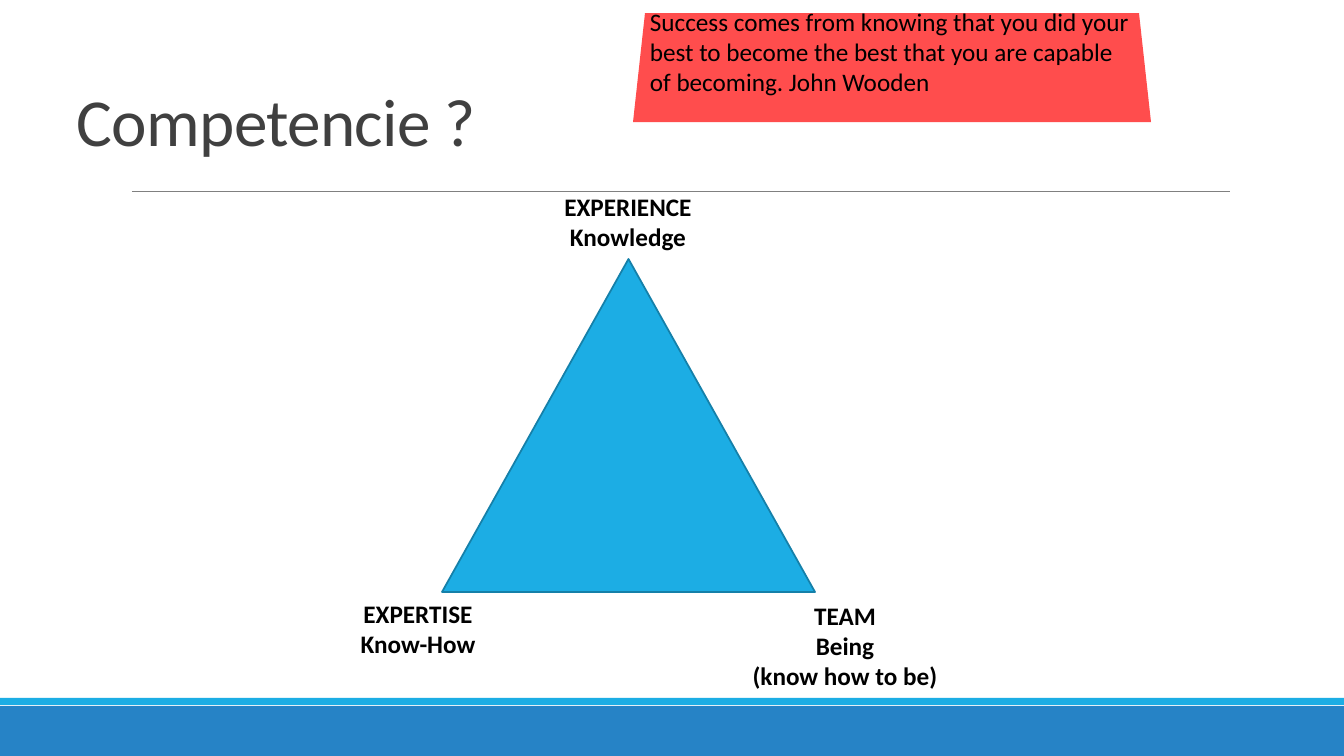
from lxml.etree import SubElement
from pptx import Presentation
from pptx.dml.color import RGBColor
from pptx.enum.shapes import MSO_CONNECTOR, MSO_SHAPE
from pptx.enum.text import MSO_ANCHOR, PP_ALIGN
from pptx.oxml.ns import qn
from pptx.util import Pt

SCALE = 914400 / 100.8


def px(n):
    return round(n * SCALE)


def rgb(value):
    return RGBColor.from_string(value)


class Deck:
    font = {"name": "Calibri", "size": Pt(18)}

    def __init__(self):
        self.prs = Presentation()
        self.prs.slide_width, self.prs.slide_height = px(1344), px(756)
        self.s = self.prs.slides.add_slide(self.prs.slide_layouts[6])

    def shape(self, kind, box, fill, line=None, width=1.25, adj=None):
        sp = self.s.shapes.add_shape(kind, *map(px, box))
        sp.shadow.inherit = False
        sp.fill.solid()
        sp.fill.fore_color.rgb = rgb(fill)
        if line:
            sp.line.color.rgb = rgb(line)
            sp.line.width = Pt(width)
        else:
            sp.line.fill.background()
        if adj is not None:
            sp.adjustments[0] = adj
        return sp

    def rule(self, x1, y1, x2, y2, color, width):
        c = self.s.shapes.add_connector(MSO_CONNECTOR.STRAIGHT, *map(px, (x1, y1, x2, y2)))
        c.line.color.rgb = rgb(color)
        c.line.width = Pt(width)
        SubElement(c._element.spPr, qn("a:effectLst"))
        return c

    def text(self, box, lines, color="000000", align=PP_ALIGN.LEFT,
             anchor=MSO_ANCHOR.TOP, spacing=None, tracking=None, **font):
        tf = self.s.shapes.add_textbox(*map(px, box)).text_frame
        tf.word_wrap = True
        tf.vertical_anchor = anchor
        for i, line in enumerate(lines):
            p = tf.paragraphs[0] if i == 0 else tf.add_paragraph()
            p.alignment = align
            p.line_spacing = spacing
            r = p.add_run()
            r.text = line
            for name, value in {**self.font, **font}.items():
                setattr(r.font, name, value)
            r.font.color.rgb = rgb(color)
            if tracking is not None:
                r._r.get_or_add_rPr().set("spc", str(tracking))
        return tf


def main():
    d = Deck()
    d.shape(MSO_SHAPE.RECTANGLE, (0, 706, 1344, 50), "2683C6")
    d.shape(MSO_SHAPE.RECTANGLE, (0, 698, 1344, 7), "1CADE4")
    d.rule(132, 191, 1230, 191, "808080", 0.5)
    d.text((67, 39, 1210, 126), ["Competencie ?"], "404040", anchor=MSO_ANCHOR.BOTTOM,
           spacing=0.85, tracking=-50, size=Pt(48))
    d.shape(MSO_SHAPE.ISOSCELES_TRIANGLE, (442, 259, 373, 333), "1CADE4", "1580A9")
    corners = [
        ((517, 186, 222, 71), ["EXPERIENCE", "Knowledge"]),
        ((315, 593, 206, 71), ["EXPERTISE", "Know-How"]),
        ((720, 595, 250, 102), ["TEAM", "Being", "(know how to be)"]),
    ]
    for box, lines in corners:
        d.text(box, lines, align=PP_ALIGN.CENTER, bold=True)
    d.shape(MSO_SHAPE.TRAPEZOID, (633, 13, 518, 109), "FF4D4D", adj=0.11)
    d.text((640, 1, 504, 132), ["Success comes from knowing that you did your best to become "
                                "the best that you are capable of becoming. John Wooden"])
    d.prs.save("out.pptx")


if __name__ == "__main__":
    main()
